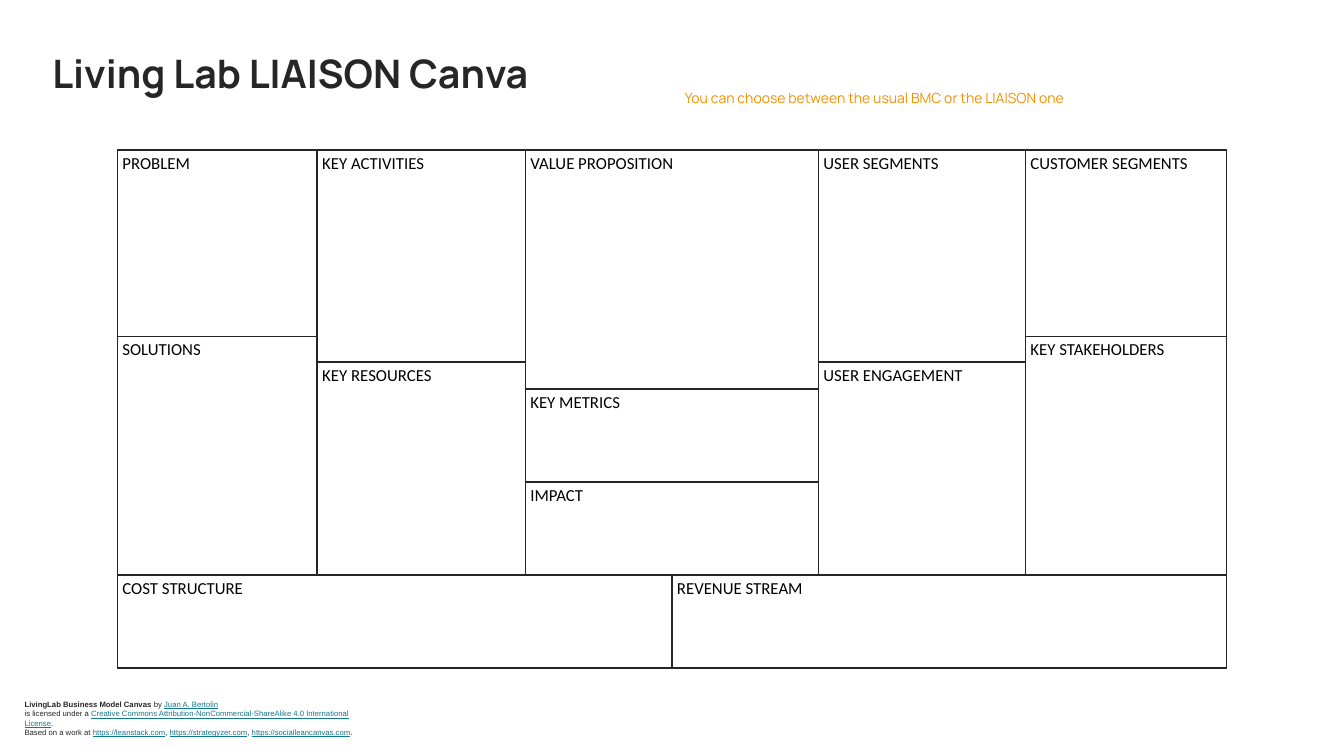
from pptx import Presentation
from pptx.dml.color import RGBColor as RGB
from pptx.enum.shapes import MSO_SHAPE as SHAPE
from pptx.enum.text import MSO_ANCHOR as ANCHOR, PP_ALIGN as ALIGN
from pptx.util import Pt

COLORS = {"ink": "262626", "label": "000000", "paper": "FFFFFF",
          "link": "13778E", "note": "F39200"}


class Canvas:
    def __init__(self, slide, line_width=2.25):
        self.s = slide
        self.line_width = line_width

    def color(self, name):
        return RGB.from_string(COLORS[name])

    def run(self, p, text, font, size, color, bold=False, underline=False):
        r = p.add_run()
        r.text = text
        r.font.name = font
        r.font.size = Pt(size)
        r.font.bold = bold
        r.font.underline = underline
        r.font.color.rgb = self.color(color)

    def rect(self, left, top, right, bottom, fill=None):
        sp = self.s.shapes.add_shape(SHAPE.RECTANGLE, Pt(left), Pt(top),
                                     Pt(right - left), Pt(bottom - top))
        sp.shadow.inherit = False
        if fill:
            sp.fill.solid()
            sp.fill.fore_color.rgb = self.color(fill)
        else:
            sp.fill.background()
        sp.line.color.rgb = self.color("ink")
        sp.line.width = Pt(self.line_width)
        return sp

    def cell(self, label, left, top, right, bottom):
        tf = self.rect(left, top, right, bottom).text_frame
        tf.word_wrap = True
        tf.vertical_anchor = ANCHOR.TOP
        p = tf.paragraphs[0]
        p.alignment = ALIGN.LEFT
        self.run(p, label, "Calibri", 24, "label")

    def text(self, left, top, width, height, lines, font, size, spacing=1.0):
        tf = self.s.shapes.add_textbox(Pt(left), Pt(top), Pt(width), Pt(height)).text_frame
        tf.word_wrap = True
        for i, runs in enumerate(lines):
            p = tf.add_paragraph() if i else tf.paragraphs[0]
            p.line_spacing = spacing
            for text, color, bold in runs:
                self.run(p, text, font, size, color, bold, color == "link")


def main():
    prs = Presentation()
    prs.slide_width, prs.slide_height = Pt(1920.24), Pt(1080)
    canvas = Canvas(prs.slides.add_slide(prs.slide_layouts[6]))

    canvas.text(67.7, 74.2, 1500, 101.5, [[("Living Lab LIAISON Canva", "ink", True)]],
                "Manrope", 56, 0.9)

    x0, x1, x2, x3, x4, x5 = 167.8, 453.3, 750.6, 1169.3, 1465.2, 1752.5
    top, outer, inner, foot, bottom = 214.4, 480.8, 516.8, 821.5, 954.5
    band = bottom - foot
    middle = (x0 + x5) / 2
    impact = foot - band
    metrics = impact - band

    canvas.rect(x0, top, x5, bottom, "paper")
    cells = [
        ("COST STRUCTURE", x0, foot, middle, bottom),
        ("REVENUE STREAM", middle, foot, x5, bottom),
        ("IMPACT", x2, impact, x3, foot),
        ("VALUE PROPOSITION", x2, top, x3, metrics),
        ("KEY METRICS", x2, metrics, x3, impact),
        ("KEY RESOURCES", x1, inner, x2, foot),
        ("SOLUTIONS", x0, outer, x1, foot),
        ("USER ENGAGEMENT", x3, inner, x4, foot),
        ("KEY STAKEHOLDERS", x4, outer, x5, foot),
        ("PROBLEM", x0, top, x1, outer),
        ("KEY ACTIVITIES", x1, top, x2, inner),
        ("USER SEGMENTS", x3, top, x4, inner),
        ("CUSTOMER SEGMENTS", x4, top, x5, outer),
    ]
    for cell in cells:
        canvas.cell(*cell)

    credits = [
        [("LivingLab Business Model Canvas ", "ink", True), ("by ", "ink", False),
         ("Juan A. Bertolin", "link", False)],
        [("is licensed under a ", "ink", False),
         ("Creative Commons Attribution-NonCommercial-ShareAlike 4.0 International License",
          "link", False), (".", "ink", False)],
        [("Based on a work at ", "ink", False), ("https://leanstack.com", "link", False),
         (", ", "ink", False), ("https://strategyzer.com", "link", False),
         (", ", "ink", False), ("https://socialleancanvas.com", "link", False),
         (".", "ink", False)],
    ]
    canvas.text(28, 996.5, 491, 47.5, credits, "Arial", 11)
    note = "You can choose between the usual BMC or the LIAISON one"
    canvas.text(971.3, 123.8, 658.8, 31.7, [[(note, "note", False)]], "Manrope", 20)

    prs.save("out.pptx")


if __name__ == "__main__":
    main()
